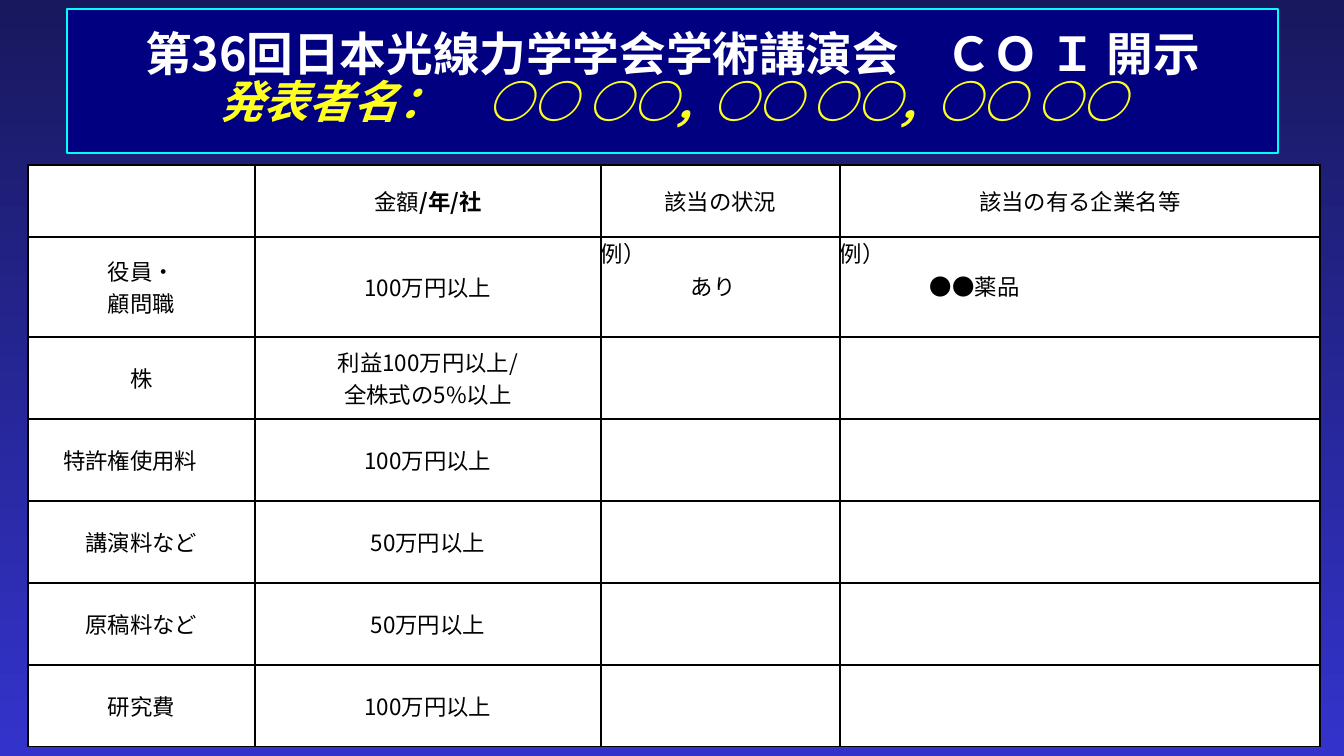
from lxml.etree import SubElement
from pptx import Presentation
from pptx.dml.color import RGBColor
from pptx.enum.text import MSO_ANCHOR, MSO_AUTO_SIZE, PP_ALIGN
from pptx.oxml import parse_xml
from pptx.oxml.ns import nsdecls, qn
from pptx.util import Emu, Pt

FONT = "Noto Sans CJK JP"
COLUMN_WIDTHS = [227, 346, 239, 480]
ROW_HEIGHTS = [72, 100] + [82] * 5
ROWS = [
    ["", "金額", "該当の状況", "該当の有る企業名等"],
    ["役員・\v顧問職", "100万円以上", "例）\nあり", "例）\n●●薬品"],
    ["株", "利益100万円以上/\v全株式の5%以上", "", ""],
    ["特許権使用料　", "100万円以上", "", ""],
    ["講演料など", "50万円以上", "", ""],
    ["原稿料など", "50万円以上", "", ""],
    ["研究費", "100万円以上", "", ""],
]


def px(length):
    return Emu(round(length * 914400 / 134.4))


def color(hex_string):
    return RGBColor.from_string(hex_string)


def format_run(run, size, hex_string, bold=False, italic=False):
    font = run.font
    font.name = FONT
    font.size = Pt(size)
    font.bold = bold
    font.italic = italic
    font.color.rgb = color(hex_string)
    SubElement(run._r.get_or_add_rPr(), qn("a:ea")).set("typeface", FONT)


def paint_background(slide):
    fill = slide.background.fill
    fill.gradient()
    fill.gradient_angle = 270
    for stop, hex_string, position in zip(fill.gradient_stops, ["18185E", "3333CC"], [0, 1]):
        stop.color.rgb = color(hex_string)
        stop.position = position


def add_title(slide):
    title = slide.shapes.title
    title.left, title.top, title.width, title.height = map(px, (67, 9, 1211, 144))
    title.fill.solid()
    title.fill.fore_color.rgb = color("000080")
    title.line.color.rgb = color("00FFFF")
    title.line.width = Pt(0.75)
    text_frame = title.text_frame
    text_frame.text = "第36回日本光線力学学会学術講演会　ＣＯ Ｉ 開示\v発表者名：　○○ ○○,  ○○ ○○,  ○○ ○○"
    text_frame.auto_size = MSO_AUTO_SIZE.NONE
    text_frame.word_wrap = True
    text_frame.vertical_anchor = MSO_ANCHOR.MIDDLE
    paragraph = text_frame.paragraphs[0]
    paragraph.alignment = PP_ALIGN.CENTER
    paragraph.line_spacing = Pt(25)
    heading, presenter = paragraph.runs
    format_run(heading, 25, "FFFFFF", bold=True)
    format_run(presenter, 24, "FFFF1F", bold=True, italic=True)


def set_borders(cell):
    properties = cell._tc.get_or_add_tcPr()
    for index, side in enumerate(["lnL", "lnR", "lnT", "lnB"]):
        border = parse_xml(
            f'<a:{side} {nsdecls("a")} w="{Pt(1)}"><a:solidFill>'
            f'<a:srgbClr val="000000"/></a:solidFill></a:{side}>'
        )
        properties.insert(index, border)


def fill_cell(cell, text):
    cell.fill.solid()
    cell.fill.fore_color.rgb = color("FFFFFF")
    set_borders(cell)
    cell.text_frame.text = text
    is_example = "\n" in text
    cell.vertical_anchor = MSO_ANCHOR.TOP if is_example else MSO_ANCHOR.MIDDLE
    cell.margin_left = cell.margin_right = px(0 if is_example else 13)
    cell.margin_top = cell.margin_bottom = px(0 if is_example else 7)
    for paragraph in cell.text_frame.paragraphs:
        paragraph.alignment = PP_ALIGN.LEFT if is_example else PP_ALIGN.CENTER
        for run in paragraph.runs:
            format_run(run, 12, "000000")
    if is_example:
        answer = cell.text_frame.paragraphs[1]
        answer._p.get_or_add_pPr().set("marL", str(px(90)))


def add_disclosure_table(slide):
    frame = slide.shapes.add_table(
        len(ROWS), len(COLUMN_WIDTHS), px(28), px(165),
        px(sum(COLUMN_WIDTHS)), px(sum(ROW_HEIGHTS)),
    )
    table = frame.table
    table.first_row = table.horz_banding = False
    for column, width in zip(table.columns, COLUMN_WIDTHS):
        column.width = px(width)
    for row, height, texts in zip(table.rows, ROW_HEIGHTS, ROWS):
        row.height = px(height)
        for cell, text in zip(row.cells, texts):
            fill_cell(cell, text)
    unit = table.cell(0, 1).text_frame.paragraphs[0].add_run()
    unit.text = "/年/社"
    format_run(unit, 12, "000000", bold=True)


def main():
    presentation = Presentation()
    presentation.slide_width = px(1344)
    presentation.slide_height = px(756)
    slide = presentation.slides.add_slide(presentation.slide_layouts[5])
    paint_background(slide)
    add_title(slide)
    add_disclosure_table(slide)
    presentation.save("out.pptx")


if __name__ == "__main__":
    main()
